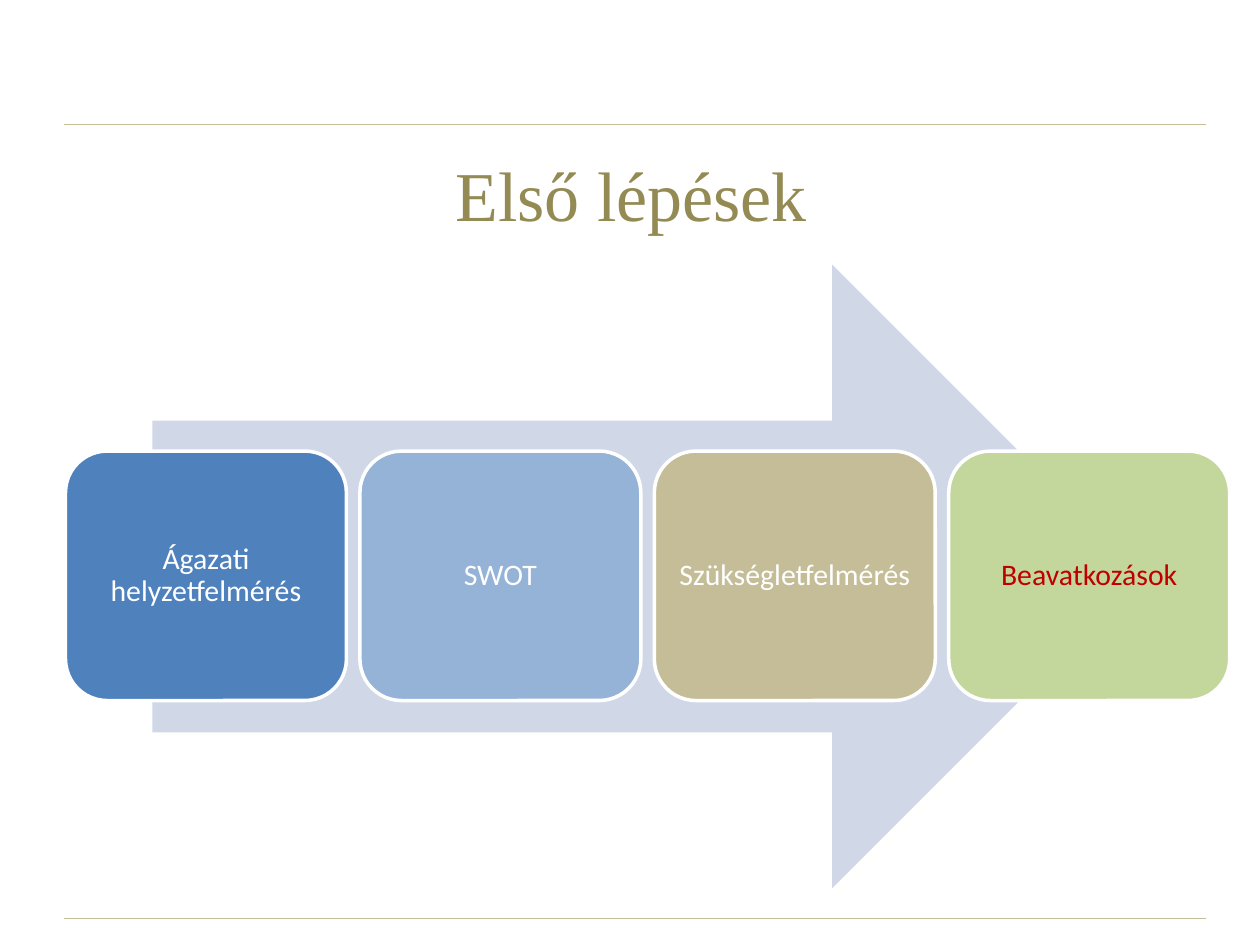
from lxml import etree
from pptx import Presentation
from pptx import util as u
from pptx.dml.color import RGBColor
from pptx.enum import shapes, text
from pptx.oxml import ns

WHITE = RGBColor(0xFF, 0xFF, 0xFF)
TAN = RGBColor(0xC4, 0xBD, 0x97)
OLIVE = RGBColor(0x94, 0x8A, 0x54)
PALE_BLUE = RGBColor(0xD0, 0xD8, 0xE8)
BLUE = RGBColor(0x4F, 0x81, 0xBD)
LIGHT_BLUE = RGBColor(0x95, 0xB3, 0xD7)
GREEN = RGBColor(0xC3, 0xD6, 0x9B)
RED = RGBColor(0xC0, 0x00, 0x00)

LEFT, RIGHT = 0.51, 9.57
STEP_LEFT, STEP_TOP = 0.52, 3.58
STEP_WIDTH, STEP_HEIGHT = 2.23, 1.98
STEP_PITCH = 7.01 / 3

STEPS = [
    ("Ágazati helyzetfelmérés", BLUE, WHITE),
    ("SWOT", LIGHT_BLUE, WHITE),
    ("Szükségletfelmérés", TAN, WHITE),
    ("Beavatkozások", GREEN, RED),
]


def write_centred(shape, wording, font_name, size, colour):
    """Write one centred paragraph in the middle of the shape."""
    frame = shape.text_frame
    frame.word_wrap = True
    frame.vertical_anchor = text.MSO_ANCHOR.MIDDLE
    paragraph = frame.paragraphs[0]
    paragraph.alignment = text.PP_ALIGN.CENTER
    run = paragraph.add_run()
    run.text = wording
    run.font.name = font_name
    run.font.size = u.Pt(size)
    run.font.color.rgb = colour
    return paragraph


presentation = Presentation()
presentation.slide_width = u.Inches(10)
presentation.slide_height = u.Inches(7.5)
slide = presentation.slides.add_slide(presentation.slide_layouts[6])

# Rules above and below the content
for y in (0.99, 7.29):
    rule = slide.shapes.add_connector(
        shapes.MSO_CONNECTOR.STRAIGHT,
        u.Inches(LEFT), u.Inches(y), u.Inches(RIGHT), u.Inches(y))
    rule.line.color.rgb = TAN
    rule.line.width = u.Pt(0.75)
    etree.SubElement(rule._element.spPr, ns.qn("a:effectLst"))

title = slide.shapes.add_textbox(
    u.Inches(LEFT), u.Inches(1.07), u.Inches(9), u.Inches(0.93))
write_centred(title, "Első lépések", "Times New Roman", 40, OLIVE)

arrow = slide.shapes.add_shape(
    shapes.MSO_SHAPE.RIGHT_ARROW,
    u.Inches(1.21), u.Inches(2.1), u.Inches(7.87), u.Inches(4.95))
arrow.shadow.inherit = False
arrow.fill.solid()
arrow.fill.fore_color.rgb = PALE_BLUE
arrow.line.fill.background()

# Four evenly spaced steps on the arrow
for column, (wording, fill_colour, text_colour) in enumerate(STEPS):
    step = slide.shapes.add_shape(
        shapes.MSO_SHAPE.ROUNDED_RECTANGLE,
        u.Inches(STEP_LEFT + column * STEP_PITCH), u.Inches(STEP_TOP),
        u.Inches(STEP_WIDTH), u.Inches(STEP_HEIGHT))
    step.shadow.inherit = False
    step.fill.solid()
    step.fill.fore_color.rgb = fill_colour
    step.line.color.rgb = WHITE
    step.line.width = u.Pt(2)
    frame = step.text_frame
    frame.margin_left = frame.margin_right = u.Inches(0.07)
    frame.margin_top = frame.margin_bottom = u.Inches(0.07)
    paragraph = write_centred(step, wording, "Calibri", 17, text_colour)
    paragraph.line_spacing = 0.9

presentation.save("out.pptx")
